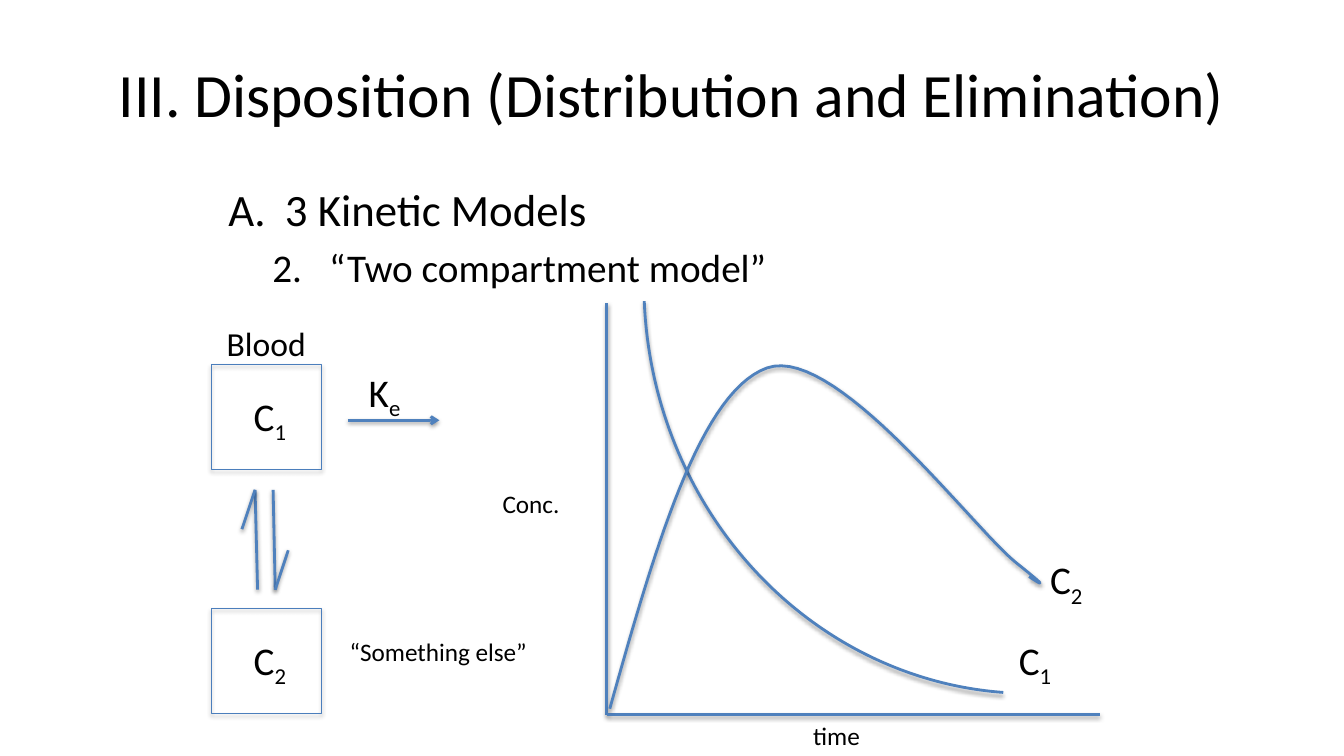
from dataclasses import dataclass

from lxml import etree
from pptx import Presentation
from pptx.dml.color import RGBColor
from pptx.enum.shapes import MSO_CONNECTOR, MSO_SHAPE
from pptx.enum.text import MSO_ANCHOR, MSO_AUTO_SIZE, PP_ALIGN
from pptx.oxml.ns import qn
from pptx.shapes.base import BaseShape
from pptx.slide import Slide
from pptx.text.text import _Paragraph
from pptx.util import Pt

STRAIGHT = MSO_CONNECTOR.STRAIGHT
ARC = MSO_SHAPE.ARC
RECTANGLE = MSO_SHAPE.RECTANGLE
MIDDLE = MSO_ANCHOR.MIDDLE
TOP = MSO_ANCHOR.TOP
FIT_TEXT = MSO_AUTO_SIZE.SHAPE_TO_FIT_TEXT
CENTER = PP_ALIGN.CENTER

Point = tuple[float, float]


@dataclass(frozen=True)
class Theme:
    font: str = "Calibri"
    ink: RGBColor = RGBColor(0, 0, 0)
    stroke: RGBColor = RGBColor(0x4F, 0x81, 0xBD)
    border: RGBColor = RGBColor(0x4B, 0x7E, 0xBC)
    shadow: str = "000000"
    title: float = 44
    heading: float = 32
    symbol: float = 28
    caption: float = 24
    note: float = 18
    stroke_width: float = 2
    border_width: float = 0.75


@dataclass(frozen=True)
class Shadow:
    opacity: int
    blur: float
    distance: float


@dataclass(frozen=True)
class Label:
    text: str
    left: float
    top: float
    width: float = 38.9
    height: float = 41
    size: float = 28
    subscript: str = ""
    wrap: bool = False


@dataclass(frozen=True)
class OutlineItem:
    text: str
    size: float
    level: int
    indent: float
    numbering: str
    start: int


@dataclass(frozen=True)
class Segment:
    start: Point
    end: Point
    arrow: bool = False


THEME = Theme()
STROKE_SHADOW = Shadow(38, 3.1, 1.6)
BOX_SHADOW = Shadow(35, 3.1, 1.8)

OUTLINE = [
    OutlineItem("3 Kinetic Models", THEME.heading, 0, 40.5, "alphaUcPeriod", 1),
    OutlineItem("“Two compartment model”", THEME.symbol, 1, 72, "arabicPeriod", 2),
]
HANGING = 40.5

COMPARTMENT_LEFT = 151.2
COMPARTMENT_WIDTH, COMPARTMENT_HEIGHT = 78.5, 74.9
COMPARTMENT_TOPS = {"1": 260.6, "2": 434.9}

LABELS = [
    *(Label("C", COMPARTMENT_LEFT + 23, top + 15.85, subscript=number)
      for number, top in COMPARTMENT_TOPS.items()),
    Label("K", 256.3, 259.2, subscript="e"),
    Label("C", 720.7, 450.7, subscript="1"),
    Label("C", 743, 393.1, subscript="2"),
    Label("“Something else”", 242.6, 450.7, 142.6, 28.8, THEME.note),
    Label("Blood", 154.8, 226.8, 71.3, 36, THEME.caption),
    Label(" Conc.", 347.8, 345.6, 85.7, 28.8, THEME.note, wrap=True),
    Label("time", 573.8, 511.2, 48.2, 28.8, THEME.note),
]

ORIGIN = (433.4, 510.5)
SEGMENTS = [
    Segment((248.4, 300.2), (313.9, 300.2), arrow=True),
    Segment((195.1, 349.9), (196.6, 421.2)),
    Segment((196.6, 421.2), (205.9, 393.1)),
    Segment((184, 421.2), (182.2, 349.9)),
    Segment((182.2, 349.9), (172.8, 378)),
    Segment((ORIGIN[0], 216.7), ORIGIN),
    Segment(ORIGIN, (785.5, ORIGIN[1])),
]

TISSUE_CURVE: list[Point] = [
    (435.6, 506.2),
    (467.3, 393.1), (499.7, 280.1), (547.9, 262.8),
    (596.9, 245.5), (695.5, 378), (726.5, 402.5),
    (757.4, 427), (735.1, 411.8), (735.1, 411.8),
]
STEPS_PER_BEND = 30


def style_paragraph(paragraph: _Paragraph, size: float) -> None:
    for run in paragraph.runs:
        run.font.name = THEME.font
        run.font.size = Pt(size)
        run.font.color.rgb = THEME.ink


def cast_shadow(shape: BaseShape, shadow: Shadow) -> None:
    properties = shape.element.spPr
    for inherited in properties.findall(qn("a:effectLst")):
        properties.remove(inherited)
    effects = etree.SubElement(properties, qn("a:effectLst"))
    outer = etree.SubElement(
        effects, qn("a:outerShdw"), blurRad=str(Pt(shadow.blur)),
        dist=str(Pt(shadow.distance)), dir="5400000", rotWithShape="0")
    color = etree.SubElement(outer, qn("a:srgbClr"), val=THEME.shadow)
    etree.SubElement(color, qn("a:alpha"), val=str(shadow.opacity * 1000))


def outline_stroke(shape: BaseShape) -> None:
    shape.line.color.rgb = THEME.stroke
    shape.line.width = Pt(THEME.stroke_width)
    cast_shadow(shape, STROKE_SHADOW)


def draw_title(slide: Slide) -> None:
    frame = slide.shapes.add_textbox(Pt(48), Pt(21.6), Pt(864), Pt(90)).text_frame
    frame.word_wrap = True
    frame.vertical_anchor = MIDDLE
    frame.text = "III. Disposition (Distribution and Elimination)"
    frame.paragraphs[0].alignment = CENTER
    style_paragraph(frame.paragraphs[0], THEME.title)


def draw_outline(slide: Slide) -> None:
    frame = slide.shapes.add_textbox(Pt(156), Pt(126), Pt(648), Pt(118.8)).text_frame
    frame.word_wrap = True
    frame.text = "\n".join(item.text for item in OUTLINE)
    for paragraph, item in zip(frame.paragraphs, OUTLINE):
        paragraph.level = item.level
        paragraph.space_before = Pt(item.size * 0.2)
        style_paragraph(paragraph, item.size)
        properties = paragraph._p.get_or_add_pPr()
        properties.set("marL", str(Pt(item.indent)))
        properties.set("indent", str(-Pt(HANGING)))
        etree.SubElement(properties, qn("a:buAutoNum"),
                         type=item.numbering, startAt=str(item.start))


def draw_label(slide: Slide, label: Label) -> None:
    frame = slide.shapes.add_textbox(
        Pt(label.left), Pt(label.top), Pt(label.width), Pt(label.height)).text_frame
    frame.word_wrap = label.wrap
    frame.auto_size = FIT_TEXT
    frame.vertical_anchor = TOP
    frame.text = label.text
    paragraph = frame.paragraphs[0]
    if label.subscript:
        subscript = paragraph.add_run()
        subscript.text = label.subscript
        subscript.font._element.set("baseline", "-25000")
    style_paragraph(paragraph, label.size)


def draw_compartment(slide: Slide, top: float) -> None:
    compartment = slide.shapes.add_shape(
        RECTANGLE, Pt(COMPARTMENT_LEFT), Pt(top),
        Pt(COMPARTMENT_WIDTH), Pt(COMPARTMENT_HEIGHT))
    compartment.fill.background()
    compartment.line.color.rgb = THEME.border
    compartment.line.width = Pt(THEME.border_width)
    cast_shadow(compartment, BOX_SHADOW)


def draw_segment(slide: Slide, segment: Segment) -> None:
    connector = slide.shapes.add_connector(
        STRAIGHT, *(Pt(value) for value in segment.start + segment.end))
    outline_stroke(connector)
    if segment.arrow:
        etree.SubElement(connector.line._get_or_add_ln(), qn("a:tailEnd"), type="arrow")


def draw_blood_curve(slide: Slide) -> None:
    curve = slide.shapes.add_shape(ARC, Pt(460.1), Pt(-83.5), Pt(544.3), Pt(578.9))
    curve.rotation = 174.6
    curve.adjustments[0] = 167.1
    curve.adjustments[1] = 2.09
    curve.fill.background()
    outline_stroke(curve)


def bezier(controls: list[Point], t: float) -> Point:
    weights = ((1 - t) ** 3, 3 * t * (1 - t) ** 2, 3 * t ** 2 * (1 - t), t ** 3)
    x, y = (sum(w * p[axis] for w, p in zip(weights, controls)) for axis in (0, 1))
    return Pt(x), Pt(y)


def draw_tissue_curve(slide: Slide) -> None:
    points = [bezier(TISSUE_CURVE[first:first + 4], step / STEPS_PER_BEND)
              for first in range(0, len(TISSUE_CURVE) - 1, 3)
              for step in range(1, STEPS_PER_BEND + 1)]
    start_x, start_y = TISSUE_CURVE[0]
    builder = slide.shapes.build_freeform(Pt(start_x), Pt(start_y))
    builder.add_line_segments(points, close=False)
    curve = builder.convert_to_shape()
    curve.fill.background()
    outline_stroke(curve)


def main() -> None:
    deck = Presentation()
    deck.slide_width, deck.slide_height = Pt(960), Pt(540)
    slide = deck.slides.add_slide(deck.slide_layouts[6])
    draw_title(slide)
    draw_outline(slide)
    for top in COMPARTMENT_TOPS.values():
        draw_compartment(slide, top)
    for segment in SEGMENTS:
        draw_segment(slide, segment)
    draw_blood_curve(slide)
    draw_tissue_curve(slide)
    for label in LABELS:
        draw_label(slide, label)
    deck.save("out.pptx")


if __name__ == "__main__":
    main()
